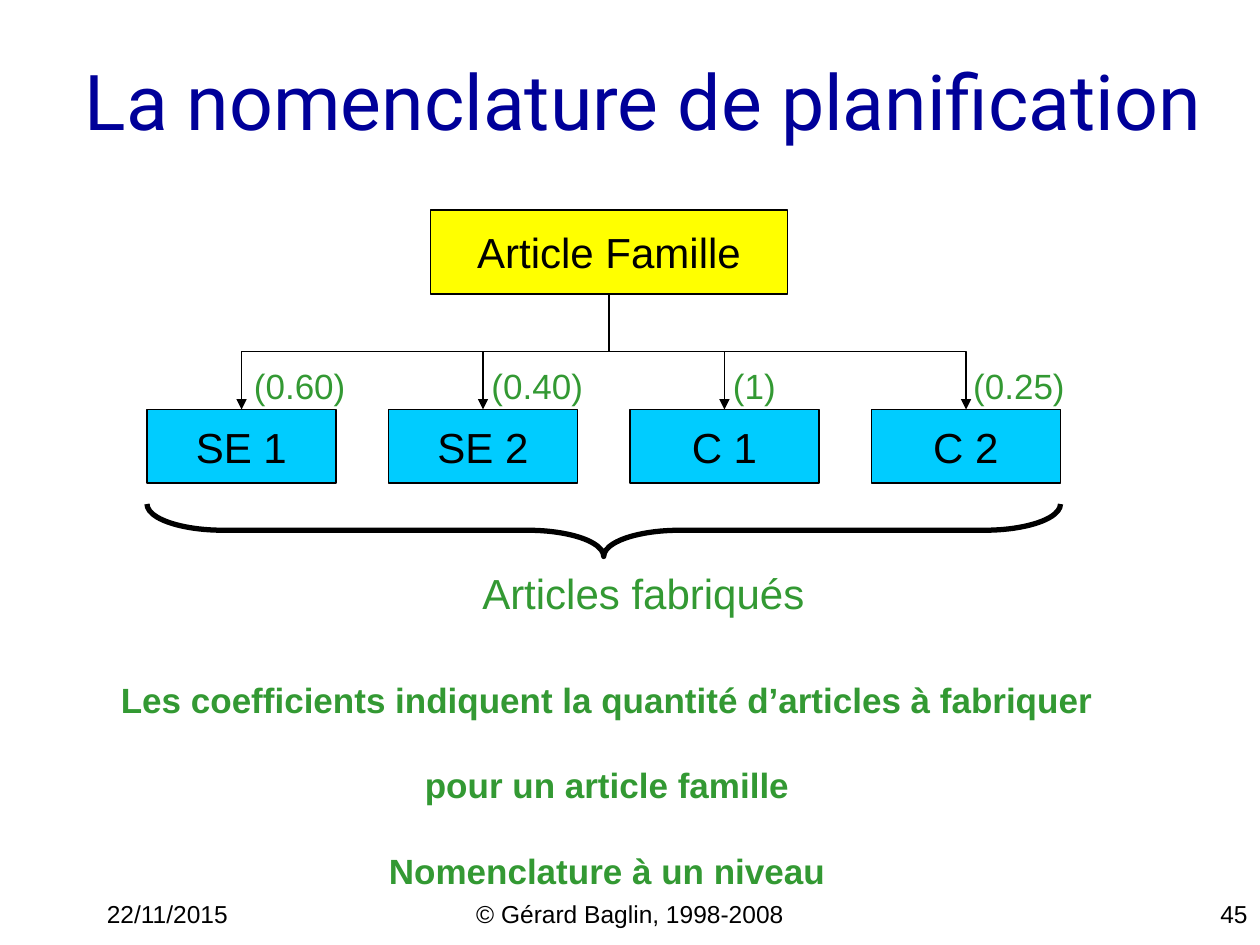
from lxml import etree
from pptx import Presentation
from pptx import util as u
from pptx.dml.color import RGBColor
from pptx.enum import shapes, text
from pptx.oxml import ns

PX = 9525
BLACK, GREEN, NAVY, YELLOW, CYAN = "000000", "339933", "000099", "FFFF00", "00CCFF"
LEFT, CENTER, RIGHT = text.PP_ALIGN.LEFT, text.PP_ALIGN.CENTER, text.PP_ALIGN.RIGHT
TOP, MIDDLE = text.MSO_ANCHOR.TOP, text.MSO_ANCHOR.MIDDLE


def px(*lengths):
    return [u.Emu(round(length * PX)) for length in lengths]


def color(value):
    return RGBColor.from_string(value)


class Diagram:
    font = "Arial"
    line_width = 0.75

    def __init__(self, slide):
        self.slide = slide

    def add_text(self, shape, lines, size, ink, align, anchor=TOP, wrap=False,
                 font=None, bold=False, gap=0):
        frame = shape.text_frame
        frame.word_wrap = wrap
        frame.vertical_anchor = anchor
        for index, line in enumerate(lines):
            paragraph = frame.add_paragraph() if index else frame.paragraphs[0]
            paragraph.alignment = align
            if index:
                paragraph.space_before = u.Pt(gap)
            run = paragraph.add_run()
            run.text = line
            run.font.name = font or self.font
            run.font.size = u.Pt(size)
            run.font.bold = bold
            run.font.color.rgb = color(ink)

    def label(self, box, lines, size, ink, align=LEFT, **style):
        shape = self.slide.shapes.add_textbox(*px(*box))
        self.add_text(shape, lines, size, ink, align, **style)

    def outline(self, line, width):
        line.color.rgb = color(BLACK)
        line.width = u.Pt(width)

    def box(self, box, name, fill):
        shape = self.slide.shapes.add_shape(shapes.MSO_SHAPE.RECTANGLE, *px(*box))
        shape.shadow.inherit = False
        shape.fill.solid()
        shape.fill.fore_color.rgb = color(fill)
        self.outline(shape.line, self.line_width)
        self.add_text(shape, [name], 24, BLACK, CENTER, MIDDLE)

    def brace(self, box, curve):
        shape = self.slide.shapes.add_shape(shapes.MSO_SHAPE.LEFT_BRACE, *px(*box))
        shape.shadow.inherit = False
        shape.rotation = 270
        shape.adjustments[0] = curve
        shape.fill.background()
        self.outline(shape.line, 3)

    def branch(self, start, end):
        (start_x, start_y), (end_x, end_y) = start, end
        center_x, center_y = (start_x + end_x) / 2, (start_y + end_y) / 2
        half_width, half_height = (end_y - start_y) / 2, abs(end_x - start_x) / 2
        to_right = end_x > start_x
        if to_right:
            half_width = -half_width
        connector = self.slide.shapes.add_connector(
            shapes.MSO_CONNECTOR.ELBOW,
            *px(center_x - half_width, center_y - half_height,
                center_x + half_width, center_y + half_height))
        self.outline(connector.line, self.line_width)
        properties = connector.element.spPr
        degrees = 270 if to_right else 90
        properties.find(ns.qn("a:xfrm")).set("rot", str(degrees * 60000))
        line = properties.find(ns.qn("a:ln"))
        etree.SubElement(line, ns.qn("a:tailEnd"), type="triangle")
        etree.SubElement(properties, ns.qn("a:effectLst"))


def main():
    presentation = Presentation()
    presentation.slide_width, presentation.slide_height = px(960, 720)
    slide = presentation.slides.add_slide(presentation.slide_layouts[6])
    diagram = Diagram(slide)

    for left, width, line, align in [
        (72, 200, "22/11/2015", LEFT),
        (328, 304, "© Gérard Baglin, 1998-2008", CENTER),
        (760, 200, "45", RIGHT),
    ]:
        diagram.label((left, 680, width, 24), [line], 14, BLACK, align, wrap=True)

    diagram.label((24, 16, 902, 120), ["La nomenclature de planification"], 44, NAVY,
                  RIGHT, anchor=MIDDLE, wrap=True, font="Roboto")

    diagram.box((328, 160, 272, 64), "Article Famille", YELLOW)
    components = [
        ("SE 1", "(0.60)", 184, 89),
        ("SE 2", "(0.40)", 365, 89),
        ("C 1", "(1)", 549, 52),
        ("C 2", "(0.25)", 732, 89),
    ]
    for index, (name, coefficient, label_left, label_width) in enumerate(components):
        left = 112 + 184 * index
        diagram.box((left, 312, 144, 56), name, CYAN)
        diagram.branch((464, 224), (left + 72, 312))
        diagram.label((label_left, 273, label_width, 41), [coefficient], 20, GREEN)

    diagram.brace((440, 56, 40, 696), 1.45)
    diagram.label((358, 428, 265, 48), ["Articles fabriqués"], 24, GREEN)
    diagram.label((80, 512, 765, 170), [
        "Les coefficients indiquent la quantité d’articles à fabriquer",
        "pour un article famille",
        "Nomenclature à un niveau",
    ], 20, GREEN, CENTER, bold=True, gap=25)

    presentation.save("out.pptx")


if __name__ == "__main__":
    main()
